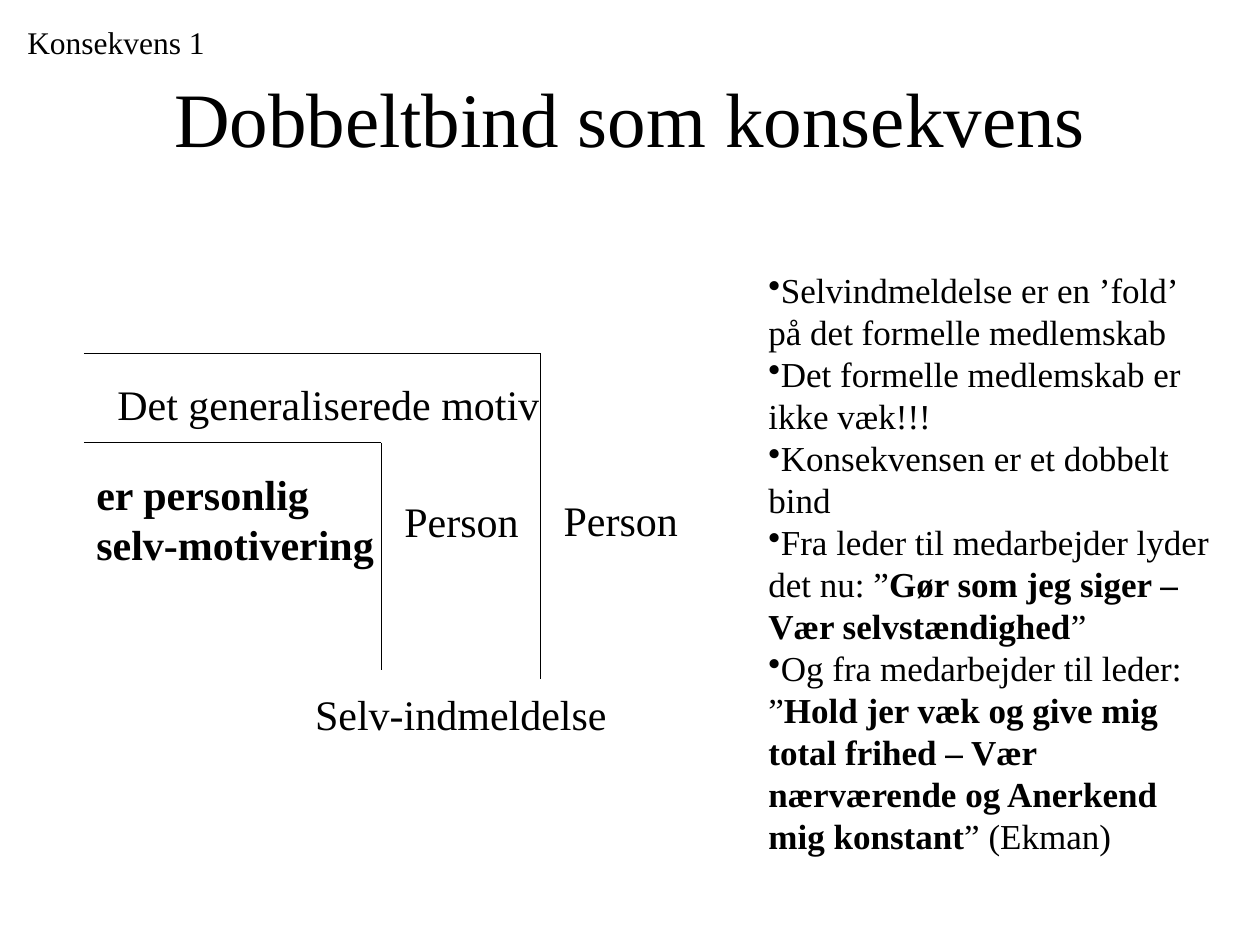
from lxml import etree
from pptx import Presentation
from pptx.dml.color import RGBColor
from pptx.enum.shapes import MSO_CONNECTOR
from pptx.enum.text import MSO_ANCHOR, MSO_AUTO_SIZE, PP_ALIGN
from pptx.oxml.ns import qn
from pptx.util import Pt

STRAIGHT = MSO_CONNECTOR.STRAIGHT
TOP, MIDDLE = MSO_ANCHOR.TOP, MSO_ANCHOR.MIDDLE
LEFT, CENTER = PP_ALIGN.LEFT, PP_ALIGN.CENTER
FIT_SHAPE = MSO_AUTO_SIZE.SHAPE_TO_FIT_TEXT

COLORS = {"text": "000000", "line": "000000"}


class Deck:
    font = "Times New Roman"
    line_width = 0.75

    def __init__(self, width, height):
        self.prs = Presentation()
        self.prs.slide_width, self.prs.slide_height = Pt(width), Pt(height)
        self.s = self.prs.slides.add_slide(self.prs.slide_layouts[6])

    def text(self, box, paragraphs, size=24, bold=False, wrap=False,
             align=LEFT, anchor=TOP, bullet=None, grow=True):
        """Each paragraph is a list of (text, bold) runs or a plain string."""
        tf = self.s.shapes.add_textbox(*map(Pt, box)).text_frame
        tf.word_wrap = wrap
        tf.vertical_anchor = anchor
        if grow:
            tf.auto_size = FIT_SHAPE
        for i, runs in enumerate(paragraphs):
            p = tf.add_paragraph() if i else tf.paragraphs[0]
            p.alignment = align
            p.font.name, p.font.size = self.font, Pt(size)
            p.font.color.rgb = RGBColor.from_string(COLORS["text"])
            if bullet:
                self.bullet(p, bullet)
            if isinstance(runs, str):
                runs = [(runs, bold)]
            for words, strong in runs:
                r = p.add_run()
                r.text, r.font.bold = words, strong

    def bullet(self, p, char):
        bu = etree.Element(qn("a:buChar"), char=char)
        # The bullet goes before the default run properties
        p._p.get_or_add_pPr().insert(0, bu)

    def line(self, x1, y1, x2, y2):
        c = self.s.shapes.add_connector(STRAIGHT, Pt(x1), Pt(y1), Pt(x2), Pt(y2))
        c.line.color.rgb = RGBColor.from_string(COLORS["line"])
        c.line.width = Pt(self.line_width)
        etree.SubElement(c._element.spPr, qn("a:effectLst"))

    def corner(self, left, top, right, bottom):
        """A top edge joined to a right edge."""
        self.line(left, top, right, top)
        self.line(right, top, right, bottom)


def main():
    deck = Deck(720, 540)

    # Headings
    deck.text((36, 21.6, 648, 90), ["Dobbeltbind som konsekvens"], size=44,
              wrap=True, align=CENTER, anchor=MIDDLE, grow=False)
    deck.text((8.5, 9.5, 117.5, 29), ["Konsekvens 1"], size=18)

    # Nested form: outer and inner distinction
    deck.corner(48, 202, 309, 388)
    deck.corner(48, 253, 218, 383)

    # Labels of the form
    deck.text((60, 213, 258, 36), ["Det generaliserede motiv"])
    deck.text((48, 264, 176, 65.5), ["er personlig selv-motivering"],
              bold=True, wrap=True)
    deck.text((224, 279.5, 80.5, 36), ["Person"])
    deck.text((315, 279, 80.5, 36), ["Person"])
    deck.text((173, 390, 181, 36), ["Selv-indmeldelse"])

    # Consequences
    points = [
        "Selvindmeldelse er en ’fold’ på det formelle medlemskab",
        "Det formelle medlemskab er ikke væk!!!",
        "Konsekvensen er et dobbelt bind",
        [("Fra leder til medarbejder lyder det nu: ”", False),
         ("Gør som jeg siger –Vær selvstændighed", True),
         ("”", False)],
        [("Og fra medarbejder til leder: ”", False),
         ("Hold jer væk og give mig total frihed – "
          "Vær nærværende og Anerkend mig konstant", True),
         ("” (Ekman)", False)],
    ]
    deck.text((432, 150, 270, 346), points, size=20, wrap=True, bullet="•")

    deck.prs.save("out.pptx")


if __name__ == "__main__":
    main()
